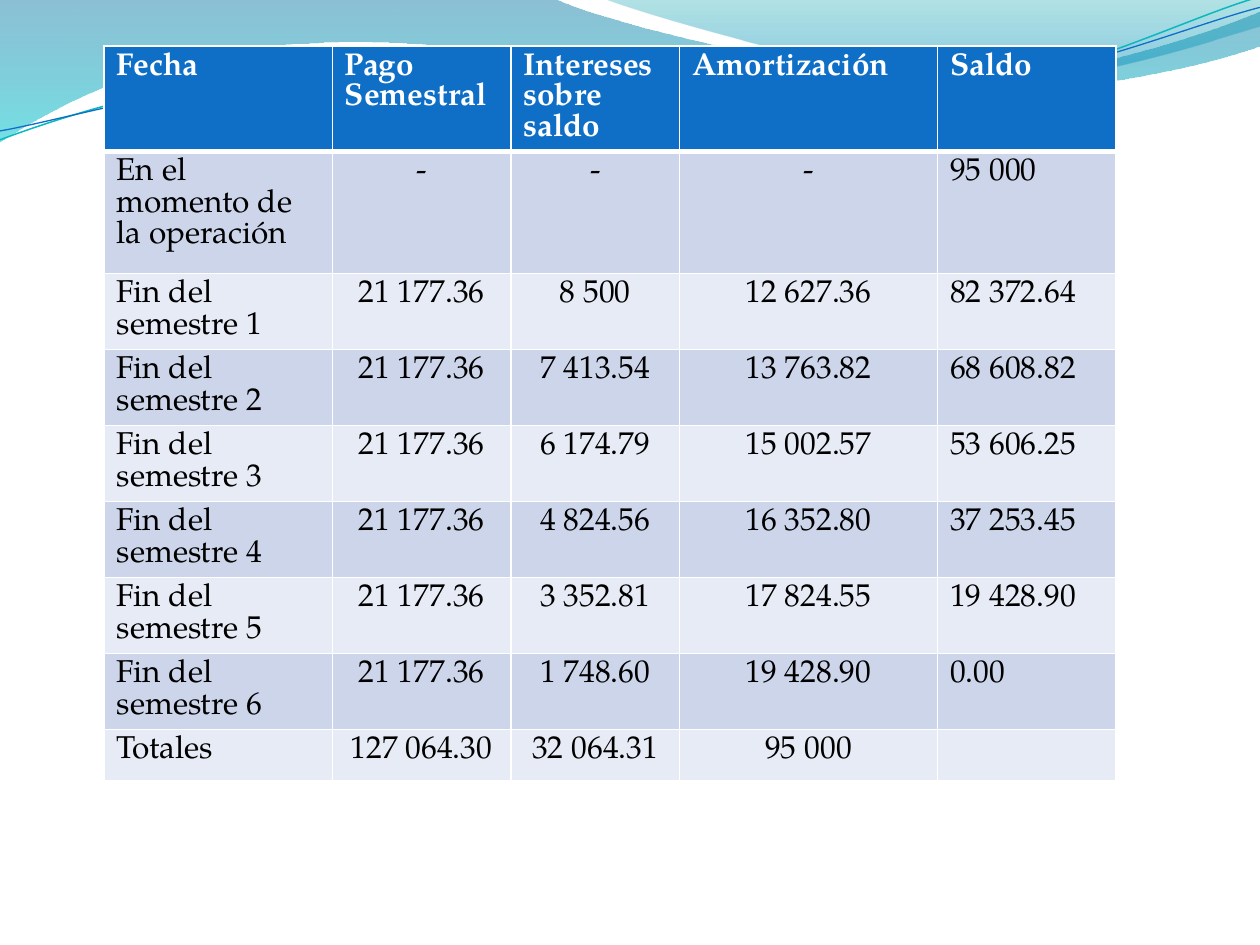
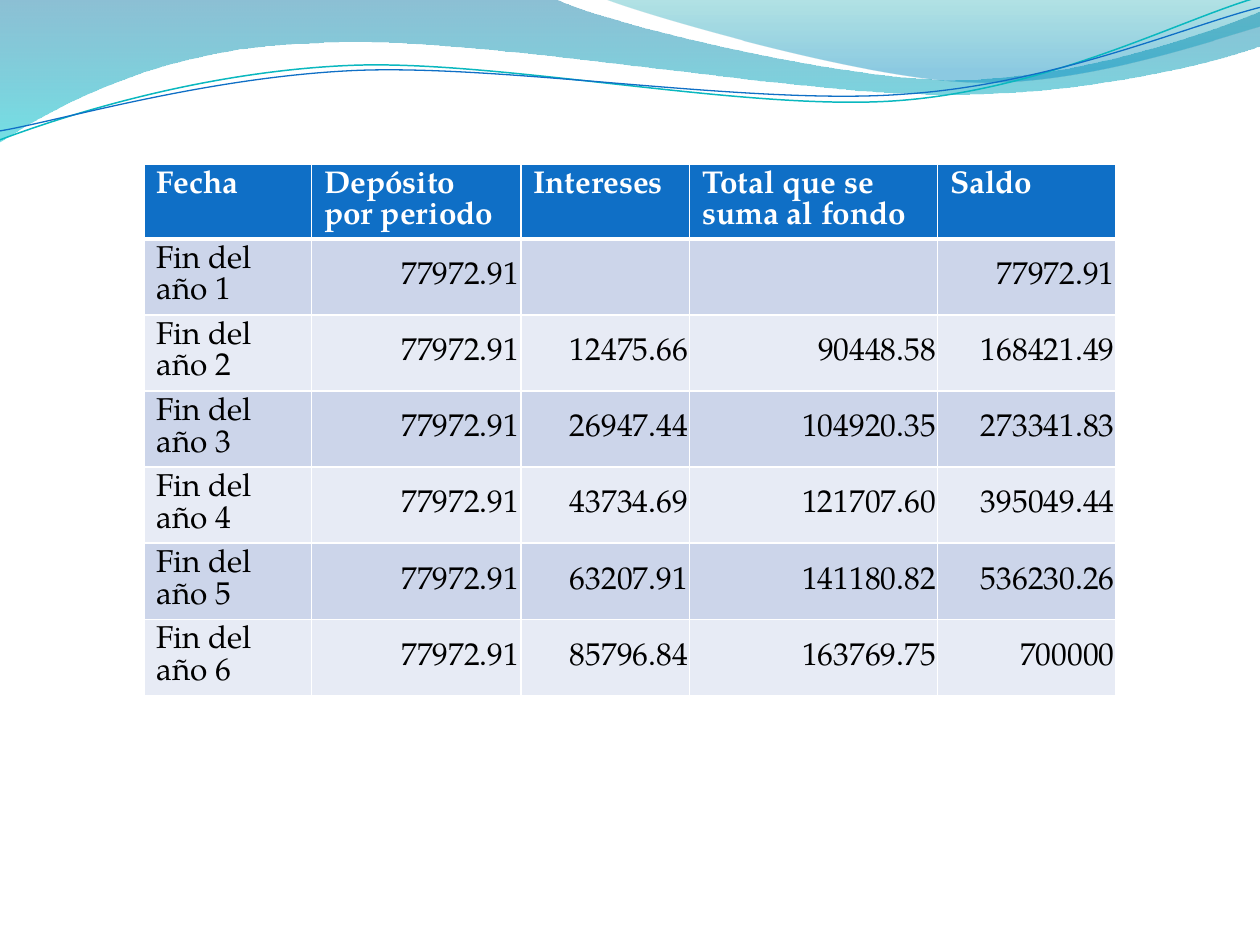
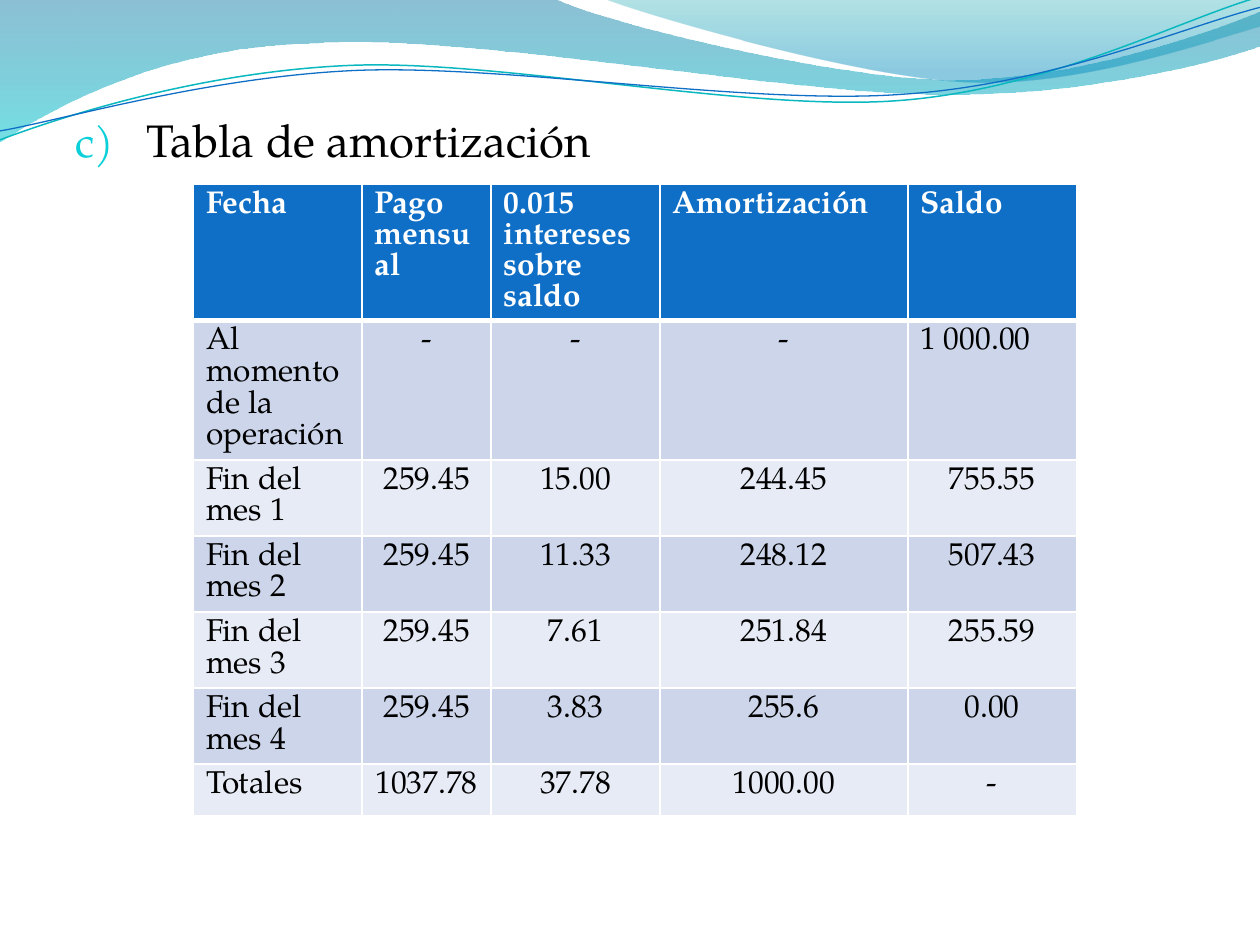
from lxml import etree
from pptx import Presentation
from pptx import util as u
from pptx.dml.color import RGBColor
from pptx.enum import text
from pptx.oxml.ns import qn

FONT = "TeX Gyre Pagella"
COLORS = {
    "white": "FFFFFF", "black": "000000", "header": "0F6FC6",
    "band_dark": "CCD5EA", "band_light": "E7EBF5", "bullet": "0BD0D9",
    "sea_top": "0074A1", "sea_bottom": "00C6CF",
    "sky_top": "00A1A9", "sky_bottom": "008BBF", "teal_line": "0AB8BF",
}
ALIGN = {"l": text.PP_ALIGN.LEFT, "c": text.PP_ALIGN.CENTER, "r": text.PP_ALIGN.RIGHT}
ROW_HEIGHT = 1.03


def rgb(name):
    return RGBColor.from_string(COLORS[name])


def write_text(para, words, size=18, color="black", bold=False, align="l"):
    para.alignment = ALIGN[align]
    span = para.add_run()
    span.text = words
    span.font.name = FONT
    span.font.size = u.Pt(size)
    span.font.bold = bold
    span.font.color.rgb = rgb(color)


# Deck and pages
deck = Presentation()
deck.slide_width, deck.slide_height = u.Cm(25.4), u.Cm(19.05)
blank, content = deck.slide_layouts[6], deck.slide_layouts[1]
pages = [deck.slides.add_slide(layout) for layout in (blank, blank, content)]

# Waves: start point, then lines (x, y) and Bézier curves (two controls, end), in cm.
# Filled waves have gradient stops (color, position, opacity); others a line (color, width).
waves = [
    {"start": (0, 0),
     "steps": [(11.18, -0.03), (12.09, 0.43, 16.87, 1.6, 19.25, 1.6),
               (21.67, 1.6, 24.33, 0.66, 25.4, 0.23), (25.43, 0.91),
               (24.97, 1.12, 22.1, 1.93, 18.95, 1.9), (15.8, 1.9, 9.7, 0.71, 6.53, 0.86),
               (3.28, 0.91, 1.17, 2.11, -0.03, 2.87)],
     "stops": [("sea_top", 0, 45), ("sea_bottom", 1, 55)]},
    {"start": (12.17, -0.03),
     "steps": [(12.93, 0.28, 17.32, 1.57, 19.53, 1.65),
               (21.74, 1.75, 24.41, 0.81, 25.4, 0.53), (25.4, 0)],
     "stops": [("sky_top", 0, 30), ("sky_bottom", 0.8, 45)]},
    {"start": (0, 2.82),
     "steps": [(1.22, 2.36, 4.01, 1.45, 7.04, 1.32), (10.03, 1.19, 15.06, 2.26, 18.11, 2.03),
               (21.16, 1.8, 23.83, 0.38, 25.35, -0.05)],
     "line": ("teal_line", 0.85)},
    {"start": (0, 2.64),
     "steps": [(1.19, 2.44, 4.17, 1.55, 7.19, 1.42), (10.24, 1.3, 15.16, 2.13, 18.21, 1.9),
               (21.23, 1.7, 23.9, 0.53, 25.4, 0.15)],
     "line": ("header", 0.75)},
]
master_tree = deck.slide_master.shapes.element
for index, wave in enumerate(waves):
    x, y = wave["start"]
    builder = pages[0].shapes.build_freeform(u.Cm(x), u.Cm(y))
    corners = [(u.Cm(step[i]), u.Cm(step[i + 1]))
               for step in wave["steps"] for i in range(0, len(step), 2)]
    builder.add_line_segments(corners, close="stops" in wave)
    shape = builder.convert_to_shape()
    shape.shadow.inherit = False

    # Join the three segments of each curve into one Bézier segment
    segments = iter(list(shape.element.iter(qn("a:lnTo"))))
    for step in wave["steps"]:
        first = next(segments)
        if len(step) == 6:
            first.tag = qn("a:cubicBezTo")
            for segment in (next(segments), next(segments)):
                first.append(segment[0])
                segment.getparent().remove(segment)

    if "stops" in wave:
        shape.line.fill.background()
        shape.fill.gradient()
        shape.fill.gradient_angle = 270
        for stop, (color, position, _) in zip(shape.fill.gradient_stops, wave["stops"]):
            stop.color.rgb = rgb(color)
            stop.position = position
        tints = list(shape.element.iter(qn("a:srgbClr")))
        for tint, (_, _, opacity) in zip(tints, wave["stops"]):
            etree.SubElement(tint, qn("a:alpha"), val=str(opacity * 1000))
    else:
        color, width = wave["line"]
        shape.fill.background()
        shape.line.color.rgb = rgb(color)
        shape.line.width = u.Pt(width)
    # The master carries the waves for every page, behind its placeholders
    master_tree.insert(2 + index, shape.element)

# List item on the third page
pages[2].shapes.title.element.getparent().remove(pages[2].shapes.title.element)
box = pages[2].placeholders[1]
box.left, box.top, box.width, box.height = u.Cm(1.27), u.Cm(2.13), u.Cm(22.86), u.Cm(3.76)
box.text_frame.auto_size = text.MSO_AUTO_SIZE.NONE
para = box.text_frame.paragraphs[0]
write_text(para, "Tabla de amortización", size=26)
props = para._p.get_or_add_pPr()
props.set("marL", str(u.Cm(1.43)))
props.set("indent", str(-u.Cm(1.43)))
bullet_color = etree.SubElement(props, qn("a:buClr"))
etree.SubElement(bullet_color, qn("a:srgbClr"), val=COLORS["bullet"])
etree.SubElement(props, qn("a:buSzPct"), val="95000")
etree.SubElement(props, qn("a:buFont"), typeface=FONT)
etree.SubElement(props, qn("a:buAutoNum"), type="alphaLcParenR", startAt="3")

# Tables
schedules = [
    {"at": (2.1, 0.93), "widths": (4.6, 3.6, 3.4, 5.2, 3.6), "aligns": "lcccl",
     "opening_height": 2.46,
     "rows": [
         ("Fecha", "Pago Semestral", "Intereses sobre saldo", "Amortización", "Saldo"),
         ("En el momento de la operación", "-", "-", "-", "95 000"),
         ("Fin del semestre 1", "21 177.36", "8 500", "12 627.36", "82 372.64"),
         ("Fin del semestre 2", "21 177.36", "7 413.54", "13 763.82", "68 608.82"),
         ("Fin del semestre 3", "21 177.36", "6 174.79", "15 002.57", "53 606.25"),
         ("Fin del semestre 4", "21 177.36", "4 824.56", "16 352.80", "37 253.45"),
         ("Fin del semestre 5", "21 177.36", "3 352.81", "17 824.55", "19 428.90"),
         ("Fin del semestre 6", "21 177.36", "1 748.60", "19 428.90", "0.00"),
         ("Totales", "127 064.30", "32 064.31", "95 000", "")]},
    {"at": (2.9, 3.32), "widths": (3.38, 4.22, 3.4, 5, 3.6), "aligns": "lrrrr",
     "opening_height": ROW_HEIGHT,
     "rows": [
         ("Fecha", "Depósito por periodo", "Intereses", "Total que se suma al fondo", "Saldo"),
         ("Fin del año 1", "77972.91", "", "", "77972.91"),
         ("Fin del año 2", "77972.91", "12475.66", "90448.58", "168421.49"),
         ("Fin del año 3", "77972.91", "26947.44", "104920.35", "273341.83"),
         ("Fin del año 4", "77972.91", "43734.69", "121707.60", "395049.44"),
         ("Fin del año 5", "77972.91", "63207.91", "141180.82", "536230.26"),
         ("Fin del año 6", "77972.91", "85796.84", "163769.75", "700000")]},
    {"at": (3.9, 3.72), "widths": (3.4, 2.6, 3.4, 5, 3.4), "aligns": "lcccc",
     "opening_height": ROW_HEIGHT,
     "rows": [
         ("Fecha", "Pago mensual", "0.015 intereses sobre saldo", "Amortización", "Saldo"),
         ("Al momento de la operación", "-", "-", "-", "1 000.00"),
         ("Fin del mes 1", "259.45", "15.00", "244.45", "755.55"),
         ("Fin del mes 2", "259.45", "11.33", "248.12", "507.43"),
         ("Fin del mes 3", "259.45", "7.61", "251.84", "255.59"),
         ("Fin del mes 4", "259.45", "3.83", "255.6", "0.00"),
         ("Totales", "1037.78", "37.78", "1000.00", "-")]},
]
for page, schedule in zip(pages, schedules):
    rows, widths = schedule["rows"], schedule["widths"]
    left, top = schedule["at"]
    table = page.shapes.add_table(len(rows), len(widths), u.Cm(left), u.Cm(top),
                                  u.Cm(sum(widths)), u.Cm(ROW_HEIGHT * len(rows))).table
    for column, width in zip(table.columns, widths):
        column.width = u.Cm(width)
    for row in table.rows:
        row.height = u.Cm(ROW_HEIGHT)
    table.rows[1].height = u.Cm(schedule["opening_height"])

    for r, values in enumerate(rows):
        for c, value in enumerate(values):
            cell = table.cell(r, c)
            # White borders, thick under the header
            cell_props = cell._tc.get_or_add_tcPr()
            for side in "LRTB":
                thick = (r, side) in ((0, "B"), (1, "T"))
                border = etree.SubElement(cell_props, qn(f"a:ln{side}"),
                                          w=str(u.Pt(3 if thick else 1)))
                paint = etree.SubElement(border, qn("a:solidFill"))
                etree.SubElement(paint, qn("a:srgbClr"), val=COLORS["white"])
            cell.fill.solid()
            band = "band_dark" if r % 2 else "band_light"
            cell.fill.fore_color.rgb = rgb(band if r else "header")
            if not value:
                continue
            para = cell.text_frame.paragraphs[0]
            if r == 0:
                write_text(para, value, color="white", bold=True)
                continue
            # The opening balance, after a dash, stays on the left
            opening = c == 4 and values[1] == "-"
            align = "l" if opening else schedule["aligns"][c]
            write_text(para, value, align=align)
            if align == "r":
                cell.vertical_anchor = text.MSO_ANCHOR.MIDDLE
                cell.margin_left = cell.margin_right = cell.margin_top = u.Cm(0.03)
                cell.margin_bottom = 0

deck.save("out.pptx")
